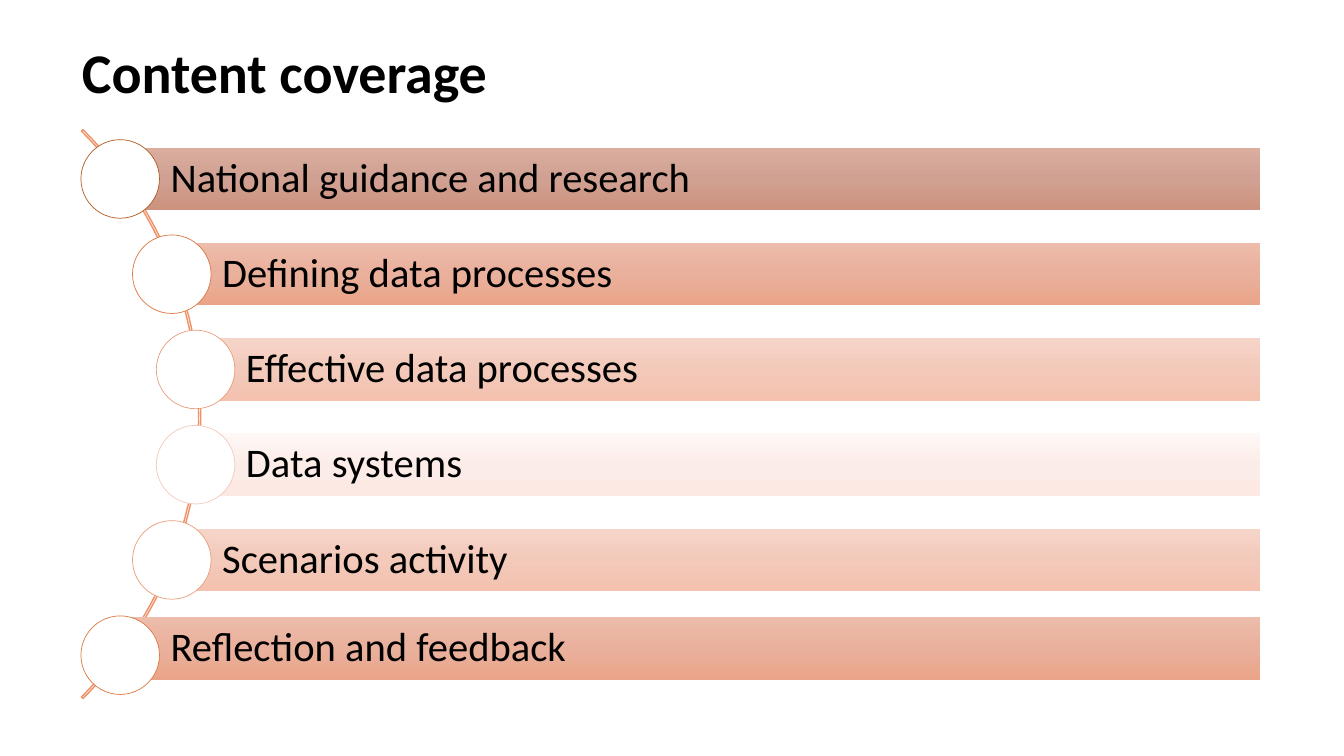
from copy import deepcopy
from dataclasses import dataclass

from pptx import Presentation
from pptx.dml.color import RGBColor
from pptx.enum.shapes import MSO_SHAPE
from pptx.enum.text import MSO_ANCHOR, MSO_AUTO_SIZE, PP_ALIGN
from pptx.util import Cm, Pt


@dataclass(frozen=True)
class Theme:
    """Colours, font and type sizes of the slide."""
    font: str = "Calibri"
    title_size: int = 40
    topic_size: int = 29
    text: str = "000000"
    circle: str = "FFFFFF"
    arc: str = "EF9166"


@dataclass(frozen=True)
class Shade:
    """Gradient of a topic bar and the outline of its circle."""
    gradient: tuple
    outline: str


THEME = Theme()
BROWN = Shade(("DAAD9F", "D0A192", "CD927E"), "AF5C24")
ORANGE = Shade(("EDBCAA", "E9B09C", "EAA489"), "DC7841")
PEACH = Shade(("F6D5C9", "F3C9BA", "F4C2AF"), "E99E7D")
BLUSH = Shade(("FEF8F6", "FCECE7", "FCE9E4"), "F5C9BB")

# Topic, indent along the arc, upward shift of the bar (cm), shade
TOPICS = [
    ("National guidance and research", 0, 0, BROWN),
    ("Defining data processes", 1.3, 0, ORANGE),
    ("Effective data processes", 1.9, 0, PEACH),
    ("Data systems", 1.9, 0, BLUSH),
    ("Scenarios activity", 1.3, 0, PEACH),
    ("Reflection and feedback", 0, 0.16, ORANGE),
]
BAR_HEIGHT = 1.58
CIRCLE_SIZE = 1.98


def style_paragraph(paragraph, size, bold=False):
    """Apply the theme font and left alignment to a paragraph."""
    paragraph.alignment = PP_ALIGN.LEFT
    paragraph.font.name = THEME.font
    paragraph.font.size = Pt(size)
    paragraph.font.bold = bold
    paragraph.font.color.rgb = RGBColor.from_string(THEME.text)


def shade_bar(bar, colours):
    """Fill a bar with an even top-to-bottom gradient."""
    bar.fill.gradient()
    bar.fill.gradient_angle = 270
    first_stop = bar._element.spPr.xpath("./a:gradFill/a:gsLst/a:gs")[0]
    first_stop.addnext(deepcopy(first_stop))
    for index, (stop, colour) in enumerate(zip(bar.fill.gradient_stops, colours)):
        stop.position = index / (len(colours) - 1)
        stop.color.rgb = RGBColor.from_string(colour)


def add_title(slide, left, top, width, height):
    """Place and format the slide title."""
    title = slide.shapes.title
    title.left, title.top, title.width, title.height = map(Cm, (left, top, width, height))
    frame = title.text_frame
    frame.text = "Content coverage"
    frame.auto_size = MSO_AUTO_SIZE.NONE
    frame.word_wrap = True
    frame.vertical_anchor = MSO_ANCHOR.MIDDLE
    style_paragraph(frame.paragraphs[0], THEME.title_size, bold=True)


def add_arc(slide, left, top, size):
    """Draw the thin arc that links the topics."""
    arc = slide.shapes.add_shape(MSO_SHAPE.BLOCK_ARC, Cm(left), Cm(top), Cm(size), Cm(size))
    arc.shadow.inherit = False
    for index, value in enumerate((189, 27, 0.0027)):
        arc.adjustments[index] = value
    arc.fill.background()
    arc.line.color.rgb = RGBColor.from_string(THEME.arc)
    arc.line.width = Pt(1)


def add_topic(slide, left, middle, width, topic, lift, shade):
    """Draw one topic bar with a circle centred on its left edge."""
    bar = slide.shapes.add_shape(
        MSO_SHAPE.RECTANGLE, Cm(left), Cm(middle - BAR_HEIGHT / 2 - lift), Cm(width), Cm(BAR_HEIGHT))
    bar.shadow.inherit = False
    bar.line.fill.background()
    shade_bar(bar, shade.gradient)
    frame = bar.text_frame
    frame.text = topic
    frame.word_wrap = True
    frame.vertical_anchor = MSO_ANCHOR.MIDDLE
    frame.margin_left = Cm(1.27)
    frame.margin_top = frame.margin_right = frame.margin_bottom = Cm(0.2)
    frame.paragraphs[0].line_spacing = 0.9
    style_paragraph(frame.paragraphs[0], THEME.topic_size)

    circle = slide.shapes.add_shape(
        MSO_SHAPE.OVAL, Cm(left - CIRCLE_SIZE / 2), Cm(middle - CIRCLE_SIZE / 2),
        Cm(CIRCLE_SIZE), Cm(CIRCLE_SIZE))
    circle.shadow.inherit = False
    circle.fill.solid()
    circle.fill.fore_color.rgb = RGBColor.from_string(THEME.circle)
    circle.line.color.rgb = RGBColor.from_string(shade.outline)
    circle.line.width = Pt(0.5)


def add_topics(slide, left, top, width, height):
    """Spread the topics evenly down the box, indented to follow the arc."""
    pitch = (height - CIRCLE_SIZE) / (len(TOPICS) - 1)
    for row, (topic, indent, lift, shade) in enumerate(TOPICS):
        bar_left = left + CIRCLE_SIZE / 2 + indent
        middle = top + CIRCLE_SIZE / 2 + row * pitch
        add_topic(slide, bar_left, middle, left + width - bar_left, topic, lift, shade)


def main():
    """Build and save the presentation."""
    presentation = Presentation()
    presentation.slide_width, presentation.slide_height = Cm(33.87), Cm(19.05)
    slide = presentation.slides.add_slide(presentation.slide_layouts[5])
    add_title(slide, 1.81, 1.1, 14.73, 1.38)
    add_arc(slide, -15.21, 0.3, 20.27)
    add_topics(slide, 2.04, 3.52, 29.72, 13.98)
    presentation.save("out.pptx")


if __name__ == "__main__":
    main()
